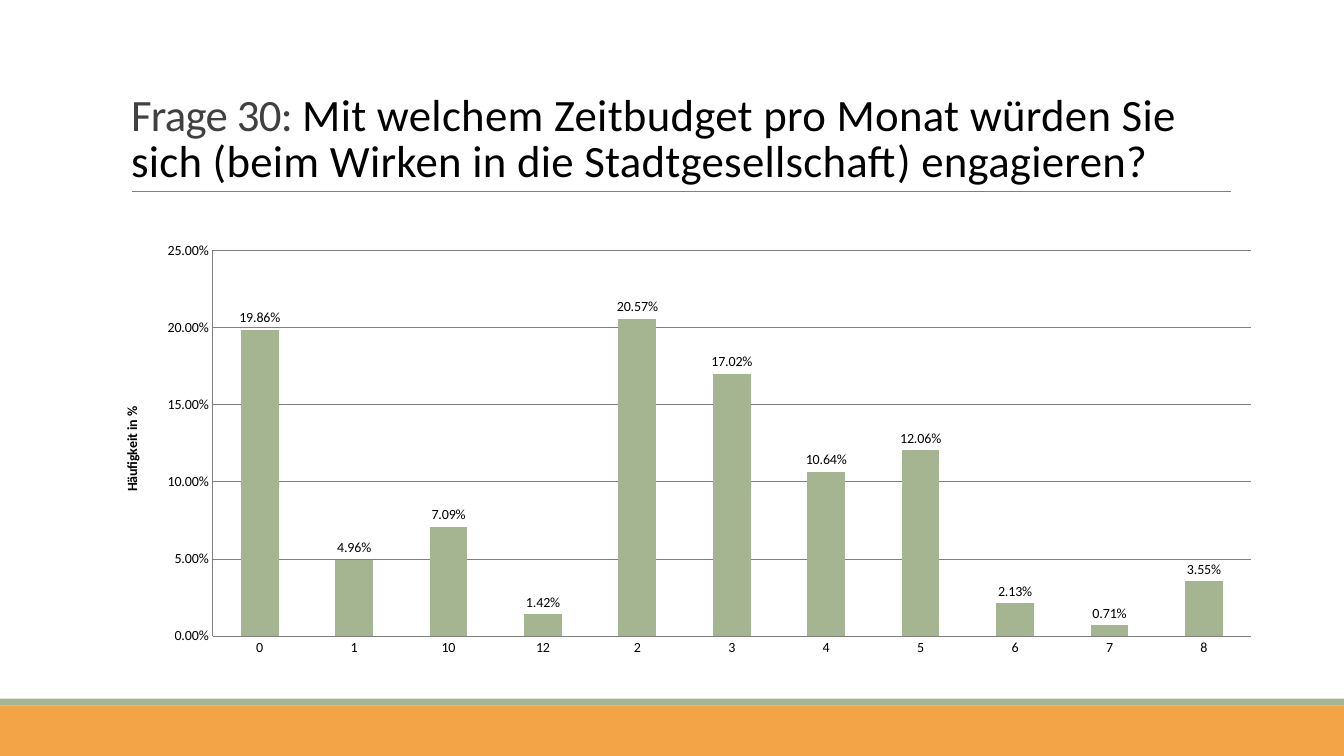
"""Build the slide on the monthly time budget for civic engagement."""
from lxml import etree
from pptx import Presentation
from pptx.chart.data import CategoryChartData
from pptx.dml.color import RGBColor
from pptx.enum.chart import XL_CHART_TYPE, XL_LABEL_POSITION, XL_TICK_MARK
from pptx.enum.shapes import MSO_CONNECTOR, MSO_SHAPE
from pptx.enum.text import MSO_ANCHOR, MSO_AUTO_SIZE, PP_ALIGN
from pptx.oxml import parse_xml
from pptx.oxml.ns import nsdecls, qn
from pptx.util import Pt

COLUMN = XL_CHART_TYPE.COLUMN_CLUSTERED
OUTSIDE = XL_LABEL_POSITION.OUTSIDE_END
NO_TICK = XL_TICK_MARK.NONE
RECT, STRAIGHT = MSO_SHAPE.RECTANGLE, MSO_CONNECTOR.STRAIGHT
BOTTOM, LEFT, NO_FIT = MSO_ANCHOR.BOTTOM, PP_ALIGN.LEFT, MSO_AUTO_SIZE.NONE

FONT = "Calibri"
GREEN, ORANGE, GREY, BLACK = "A5B592", "F3A447", "808080", "000000"
WIDTH, HEIGHT = 960, 540
TITLE = [
    ("Frage 30: ", "404040", -0.5),
    ("Mit welchem Zeitbudget pro Monat würden Sie sich "
     "(beim Wirken in die Stadtgesellschaft) engagieren?", BLACK, 0.2),
]
TITLE_BOX = (86.4, 22.3, 792, 114.5)
RULE = (94.3, 136.8, 879.1)
CHART_BOX = (80.6, 136.8, 828, 342.7)
PLOT = {"x": 0.086, "y": 0.123, "w": 0.896, "h": 0.804}
AXIS_TITLE = "Häufigkeit in %"
SHARES = {
    "0": 0.1986, "1": 0.0496, "10": 0.0709, "12": 0.0142,
    "2": 0.2057, "3": 0.1702, "4": 0.1064, "5": 0.1206,
    "6": 0.0213, "7": 0.0071, "8": 0.0355,
}
BANDS = [(504, 36, ORANGE), (499, 5, GREEN)]


def rgb(value):
    return RGBColor.from_string(value)


def style(font, size=10, color=BLACK, bold=False):
    font.name, font.size, font.bold = FONT, Pt(size), bold
    font.color.rgb = rgb(color)


def add_text(p, text, spacing=0, **fmt):
    r = p.add_run()
    r.text = text
    style(r.font, **fmt)
    if spacing:
        r.font._element.set("spc", str(round(spacing * 100)))


def add_band(s, top, height, color):
    sp = s.shapes.add_shape(RECT, 0, Pt(top), Pt(WIDTH), Pt(height))
    sp.shadow.inherit = False
    sp.fill.solid()
    sp.fill.fore_color.rgb = rgb(color)
    sp.line.fill.background()


def add_rule(s, left, top, right):
    line = s.shapes.add_connector(STRAIGHT, Pt(left), Pt(top), Pt(right), Pt(top))
    line.line.color.rgb = rgb(GREY)
    line.line.width = Pt(0.5)
    etree.SubElement(line._element.spPr, qn("a:effectLst"))


def fill_title(sp):
    sp.left, sp.top, sp.width, sp.height = map(Pt, TITLE_BOX)
    tf = sp.text_frame
    tf.word_wrap, tf.auto_size, tf.vertical_anchor = True, NO_FIT, BOTTOM
    p = tf.paragraphs[0]
    p.alignment, p.line_spacing = LEFT, 0.85
    for text, color, spacing in TITLE:
        add_text(p, text, size=32, color=color, spacing=spacing)


def place_plot(chart):
    marks = "".join(f'<c:{k}Mode val="edge"/>' for k in "xy")
    sizes = "".join(f'<c:{k} val="{v}"/>' for k, v in PLOT.items())
    area = chart._chartSpace.chart.plotArea
    for old in area.findall(qn("c:layout")):
        area.remove(old)
    area.insert(0, parse_xml(
        f'<c:layout {nsdecls("c")}><c:manualLayout><c:layoutTarget val="inner"/>'
        f'{marks}{sizes}</c:manualLayout></c:layout>'))


def add_share_chart(s):
    data = CategoryChartData(number_format="0.00%")
    data.categories = list(SHARES)
    data.add_series("Series 1", list(SHARES.values()))
    chart = s.shapes.add_chart(COLUMN, *map(Pt, CHART_BOX), data).chart
    chart.has_legend = chart.has_title = False
    style(chart.font)
    place_plot(chart)

    plot = chart.plots[0]
    plot.gap_width, plot.vary_by_categories = 150, False
    plot.has_data_labels = True
    labels = plot.data_labels
    labels.show_value, labels.position = True, OUTSIDE
    labels.number_format, labels.number_format_is_linked = "0.00%", False
    style(labels.font)
    fill = plot.series[0].format.fill
    fill.solid()
    fill.fore_color.rgb = rgb(GREEN)

    values = chart.value_axis
    values.minimum_scale, values.maximum_scale, values.major_unit = 0, 0.25, 0.05
    values.has_major_gridlines = True
    values.tick_labels.number_format = "0.00%"
    values.tick_labels.number_format_is_linked = False
    add_text(values.axis_title.text_frame.paragraphs[0], AXIS_TITLE, bold=True)
    for axis in (chart.category_axis, values):
        axis.major_tick_mark = axis.minor_tick_mark = NO_TICK
        style(axis.tick_labels.font)
    for part in (chart.category_axis, values, values.major_gridlines):
        part.format.line.color.rgb = rgb(GREY)
        part.format.line.width = Pt(0.75)


def main():
    prs = Presentation()
    prs.slide_width, prs.slide_height = Pt(WIDTH), Pt(HEIGHT)
    s = prs.slides.add_slide(prs.slide_layouts[5])
    for band in BANDS:
        add_band(s, *band)
    add_rule(s, *RULE)
    fill_title(s.shapes.title)
    add_share_chart(s)
    prs.save("out.pptx")


if __name__ == "__main__":
    main()
